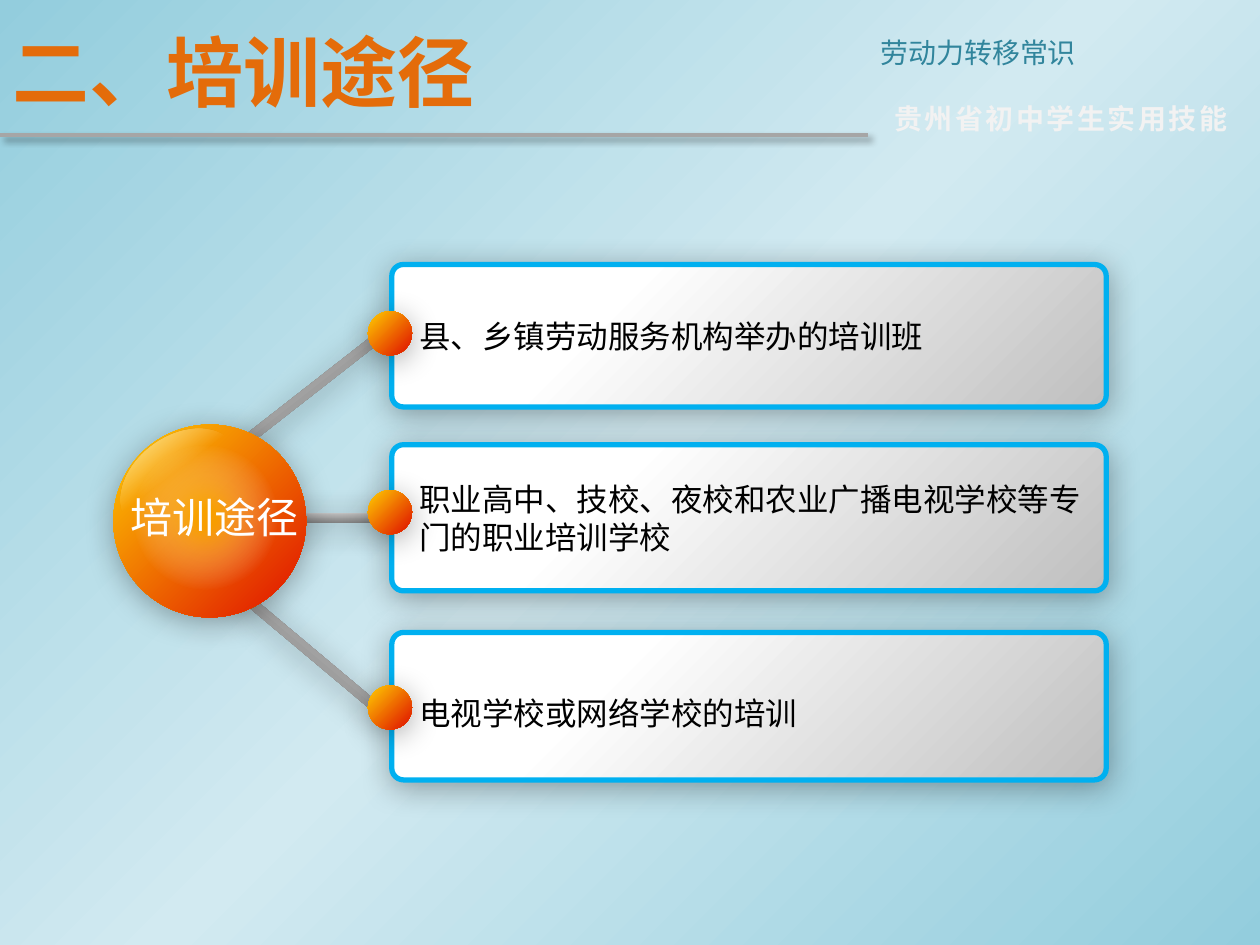
from dataclasses import dataclass
from typing import Optional

from lxml.etree import SubElement
from pptx import Presentation
from pptx.dml.color import RGBColor
from pptx.enum.shapes import MSO_CONNECTOR, MSO_SHAPE as Shape
from pptx.enum.text import MSO_ANCHOR as Anchor, MSO_AUTO_SIZE as AutoSize, PP_ALIGN as Align
from pptx.oxml.ns import qn
from pptx.util import Inches, Pt

FONT = "Noto Sans CJK SC"
COLORS = {
    "title": "E46C0A", "topic": "31859C", "series": "F2F2F2",
    "rule": "A6A6A6", "border": "00B0F0", "black": "000000", "white": "FFFFFF",
}


@dataclass(frozen=True)
class Stop:
    position: int
    color: str
    alpha: int = 100


@dataclass(frozen=True)
class Gradient:
    stops: tuple[Stop, ...]
    angle: Optional[int] = None  # None means circular


@dataclass(frozen=True)
class Shadow:
    alpha: int
    blur: float
    distance: float
    angle: int


@dataclass(frozen=True)
class Branch:
    text: str
    top: float
    height: float
    text_top: float
    text_height: float
    dot_top: float
    bar: tuple[float, float, float]  # left, top, width
    rotation: float = 0


BACKGROUND = Gradient((Stop(0, "93CDDD"), Stop(50, "D2EAF1"), Stop(100, "93CDDD")), 45)
BAR = Gradient((Stop(0, "808080"), Stop(100, "BFBFBF")), 270)
PANEL = Gradient((Stop(30, "FFFFFF"), Stop(100, "BFBFBF")), 45)
BALL = Gradient((Stop(0, "FFCF01"), Stop(90, "E22000")), 45)
SHINE = Gradient((Stop(0, "FFFFFF"), Stop(45, "FFFFFF", 0)), 90)
GLOW = Gradient((Stop(10, "FFC000", 60), Stop(70, "FFFFFF", 0)))

SOFT_SHADOW = Shadow(33, 17.8, 3, 87)
RULE_SHADOW = Shadow(40, 4, 3, 45)

BRANCHES = (
    Branch("职业高中、技校、夜校和农业广播电视学校等专门的职业培训学校",
           3.53, 1.16, 3.76, 0.71, 3.89, (1.47, 4.07, 1.68)),
    Branch("县、乡镇劳动服务机构举办的培训班",
           2.1, 1.13, 2.47, 0.4, 2.47, (1.33, 3.19, 1.93), 322),
    Branch("电视学校或网络学校的培训",
           5.02, 1.17, 5.46, 0.4, 5.44, (1.31, 4.98, 1.93), 40),
)


def add_color(parent, color: str, alpha: int) -> None:
    node = SubElement(parent, qn("a:srgbClr"), val=color)
    if alpha < 100:
        SubElement(node, qn("a:alpha"), val=str(alpha * 1000))


def apply_gradient(owner, fill, gradient: Gradient) -> None:
    """Give the fill of a shape or slide background its own stops and direction."""
    fill.gradient()
    node = owner.element.find(".//" + qn("a:gradFill"))
    for child in list(node):
        node.remove(child)
    node.set("rotWithShape", "1")
    stops = SubElement(node, qn("a:gsLst"))
    for stop in gradient.stops:
        add_color(SubElement(stops, qn("a:gs"), pos=str(stop.position * 1000)),
                  stop.color, stop.alpha)
    if gradient.angle is None:
        path = SubElement(node, qn("a:path"), path="circle")
        SubElement(path, qn("a:fillToRect"), l="50000", t="50000", r="50000", b="50000")
    else:
        SubElement(node, qn("a:lin"), ang=str(gradient.angle * 60000), scaled="0")


def add_shadow(effects, shadow: Shadow) -> None:
    node = SubElement(effects, qn("a:outerShdw"), blurRad=str(Pt(shadow.blur)),
                      dist=str(Pt(shadow.distance)), dir=str(shadow.angle * 60000),
                      algn="ctr", rotWithShape="0")
    add_color(node, COLORS["black"], shadow.alpha)


def add_figure(shapes, kind: Shape, box: tuple, gradient: Gradient, *,
               corner: Optional[float] = None, rotation: float = 0,
               border: Optional[str] = None, shadow: Optional[Shadow] = SOFT_SHADOW) -> None:
    shape = shapes.add_shape(kind, *map(Inches, box))
    shape.rotation = rotation
    if corner is not None:
        shape.adjustments[0] = corner
    apply_gradient(shape, shape.fill, gradient)
    if border:
        shape.line.color.rgb = RGBColor.from_string(border)
        shape.line.width = Pt(3)
    else:
        shape.line.fill.background()
    shape.shadow.inherit = False
    if shadow:
        add_shadow(shape.element.spPr.find(qn("a:effectLst")), shadow)


def write_text(shape, text: str, *, size: float, color: str, bold: bool = False,
               align: Align = Align.LEFT, anchor: Anchor = Anchor.TOP,
               tracking: float = 0, auto_size: AutoSize = AutoSize.SHAPE_TO_FIT_TEXT) -> None:
    frame = shape.text_frame
    frame.word_wrap = True
    frame.auto_size = auto_size
    frame.vertical_anchor = anchor
    paragraph = frame.paragraphs[0]
    paragraph.alignment = align
    paragraph.line_spacing = Pt(size * 1.2)
    run = paragraph.add_run()
    run.text = text
    font = run.font
    font.size, font.bold, font.name = Pt(size), bold, FONT
    font.color.rgb = RGBColor.from_string(color)
    properties = run._r.get_or_add_rPr()
    SubElement(properties, qn("a:ea"), typeface=FONT)
    if tracking:
        properties.set("spc", str(int(tracking * 100)))


def add_text(shapes, box: tuple, text: str, **text_format) -> None:
    write_text(shapes.add_textbox(*map(Inches, box)), text, **text_format)


def add_header(slide) -> None:
    title = slide.shapes.title
    title.left, title.top, title.width, title.height = map(Inches, (0, 0.05, 6.89, 1.02))
    write_text(title, "二、培训途径", size=44, color=COLORS["title"], bold=True,
               anchor=Anchor.MIDDLE, auto_size=AutoSize.NONE)
    rule = slide.shapes.add_connector(MSO_CONNECTOR.STRAIGHT, *map(Inches, (0, 1.07, 6.89, 1.07)))
    rule.line.color.rgb = RGBColor.from_string(COLORS["rule"])
    rule.line.width = Pt(2.25)
    add_shadow(SubElement(rule.element.spPr, qn("a:effectLst")), RULE_SHADOW)
    add_text(slide.shapes, (6.89, 0.23, 3.11, 0.37), "劳动力转移常识",
             size=16, color=COLORS["topic"], align=Align.JUSTIFY)
    add_text(slide.shapes, (7, 0.76, 3, 0.37), "贵州省初中学生实用技能",
             size=16, color=COLORS["series"], bold=True, tracking=1.5)


def add_branch(slide, branch: Branch) -> None:
    shapes = slide.shapes.add_group_shape().shapes
    add_figure(shapes, Shape.ROUNDED_RECTANGLE, (*branch.bar, 0.08), BAR,
               corner=0.5, rotation=branch.rotation)
    add_figure(shapes, Shape.ROUNDED_RECTANGLE, (3.11, branch.top, 5.67, branch.height), PANEL,
               corner=0.08, border=COLORS["border"])
    add_text(shapes, (3.23, branch.text_top, 5.55, branch.text_height), branch.text,
             size=18, color=COLORS["black"])
    add_figure(shapes, Shape.OVAL, (2.92, branch.dot_top, 0.35, 0.35), BALL)


def add_hub(slide) -> None:
    shapes = slide.shapes.add_group_shape().shapes
    add_figure(shapes, Shape.OVAL, (0.9, 3.37, 1.53, 1.53), BALL)
    add_figure(shapes, Shape.OVAL, (0.91, 3.46, 1.04, 0.74), SHINE, rotation=323.1, shadow=None)
    add_figure(shapes, Shape.OVAL, (1.05, 3.53, 1.16, 1.16), GLOW, shadow=None)
    add_text(shapes, (0.92, 3.85, 1.57, 0.5), "培训途径", size=24, color=COLORS["white"],
             align=Align.CENTER, anchor=Anchor.MIDDLE)


def main() -> None:
    presentation = Presentation()
    presentation.slide_width, presentation.slide_height = Inches(10), Inches(7.5)
    slide = presentation.slides.add_slide(presentation.slide_layouts[5])
    apply_gradient(slide, slide.background.fill, BACKGROUND)
    add_header(slide)
    for branch in BRANCHES:
        add_branch(slide, branch)
    add_hub(slide)
    presentation.save("out.pptx")


if __name__ == "__main__":
    main()
